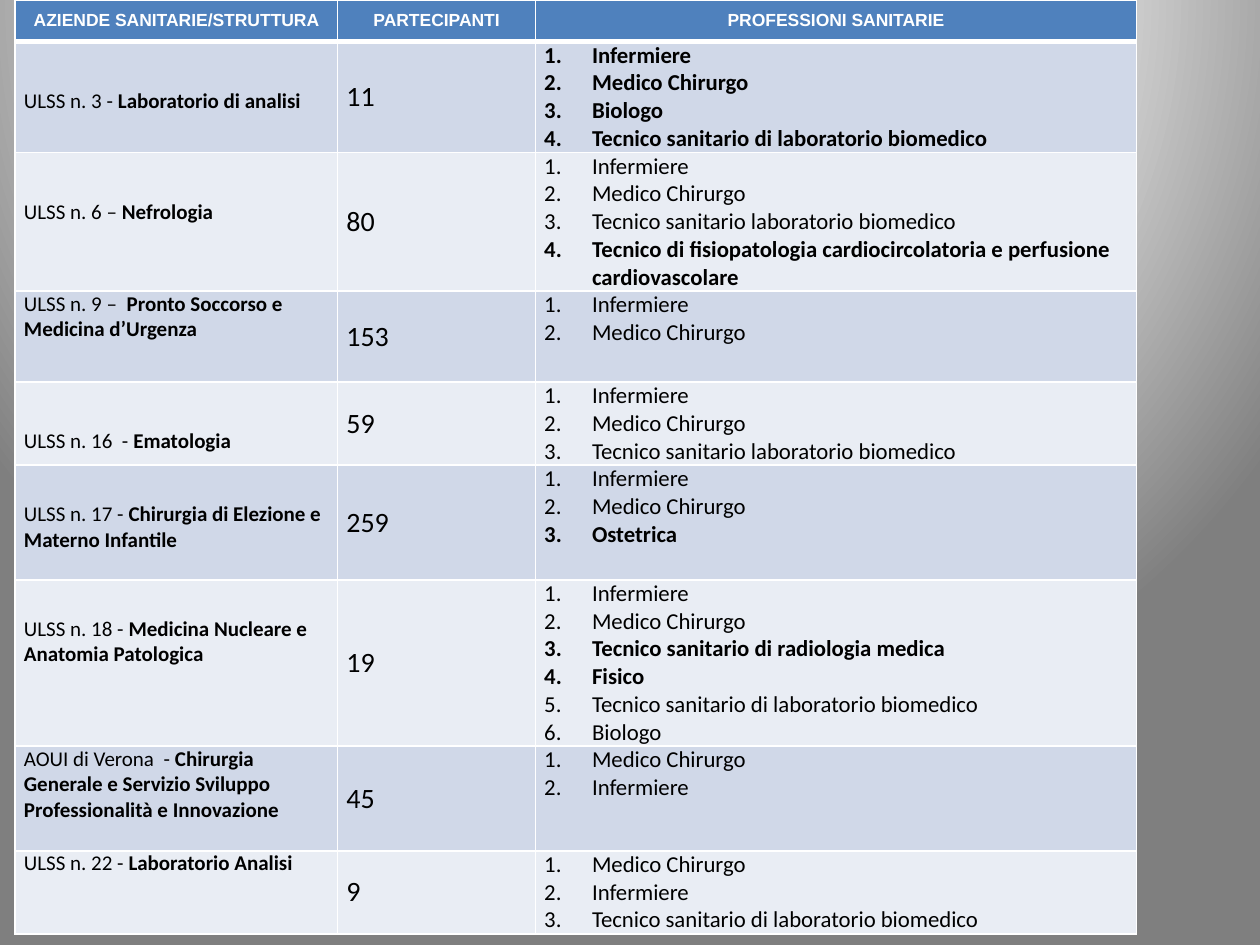
"""Build a slide with a table of health units, participants and professions."""
from collections import namedtuple

from pptx import Presentation
from pptx.dml.color import RGBColor
from pptx.enum.text import MSO_ANCHOR as Anchor, PP_ALIGN as Align
from pptx.oxml import parse_xml
from pptx.oxml.ns import nsdecls
from pptx.util import Inches, Pt

Unit = namedtuple("Unit", "name ward drop participants jobs bold_jobs")

COLUMNS = (2.56, 1.57, 4.77)
ROWS = (0.33, 0.88, 1.1, 0.72, 0.66, 0.91, 1.32, 0.83, 0.66)
HEADINGS = ("AZIENDE SANITARIE/STRUTTURA", "PARTECIPANTI", "PROFESSIONI SANITARIE")
WHITE, BLACK, HEADER = "FFFFFF", "000000", "4F81BD"
BANDS = ("D0D8E8", "E9EDF4")
INDENT = Inches(0.38)

NURSE, DOCTOR, BIOLOGIST = "Infermiere", "Medico Chirurgo", "Biologo"
LAB = "Tecnico sanitario laboratorio biomedico"
LAB_DI = "Tecnico sanitario di laboratorio biomedico"
PERFUSION = "Tecnico di fisiopatologia cardiocircolatoria e perfusione cardiovascolare"
RADIOLOGY, PHYSICIST, MIDWIFE = "Tecnico sanitario di radiologia medica", "Fisico", "Ostetrica"

UNITS = (
    Unit("ULSS n. 3 - ", "Laboratorio di analisi", 0.37, 11,
         (NURSE, DOCTOR, BIOLOGIST, LAB_DI), (NURSE, DOCTOR, BIOLOGIST, LAB_DI)),
    Unit("ULSS n. 6 – ", "Nefrologia", 0.37, 80,
         (NURSE, DOCTOR, LAB, PERFUSION), (PERFUSION,)),
    Unit("ULSS n. 9 –  ", "Pronto Soccorso e Medicina d’Urgenza", 0, 153,
         (NURSE, DOCTOR), ()),
    Unit("ULSS n. 16  - ", "Ematologia", 0.37, 59, (NURSE, DOCTOR, LAB), ()),
    Unit("ULSS n. 17 - ", "Chirurgia di Elezione e Materno Infantile", 0.29, 259,
         (NURSE, DOCTOR, MIDWIFE), (MIDWIFE,)),
    Unit("ULSS n. 18 - ", "Medicina Nucleare e Anatomia Patologica", 0.29, 19,
         (NURSE, DOCTOR, RADIOLOGY, PHYSICIST, LAB_DI, BIOLOGIST), (RADIOLOGY, PHYSICIST)),
    Unit("AOUI di Verona  - ",
         "Chirurgia Generale e Servizio Sviluppo Professionalità e Innovazione", 0, 45,
         (DOCTOR, NURSE), ()),
    Unit("ULSS n. 22 - ", "Laboratorio Analisi", 0, 9, (DOCTOR, NURSE, LAB_DI), ()),
)


def color(hex_code):
    """Turn a hex string into a colour."""
    return RGBColor.from_string(hex_code)


def set_background(slide):
    """Fill the background with a round gradient from white to grey."""
    stops = "".join(
        f'<a:gs pos="{share * 1000}"><a:srgbClr val="{tone}"/></a:gs>'
        for share, tone in ((0, WHITE), (40, "FEFEFE"), (100, "7F7F7F")))
    slide.element.cSld.insert(0, parse_xml(
        f'<p:bg {nsdecls("p", "a")}><p:bgPr><a:gradFill rotWithShape="1">'
        f'<a:gsLst>{stops}</a:gsLst><a:path path="circle">'
        '<a:fillToRect l="50000" t="-80000" r="50000" b="180000"/></a:path>'
        '</a:gradFill><a:effectLst/></p:bgPr></p:bg>'))


def style_cell(cell, fill, anchor, top=1, bottom=1, drop=0):
    """Set the fill, white borders, margins and anchor of a cell."""
    cell.fill.solid()
    cell.fill.fore_color.rgb = color(fill)
    cell.margin_left = cell.margin_right = Inches(0.07)
    cell.margin_top, cell.margin_bottom = Inches(drop), 0
    cell.vertical_anchor = anchor
    borders = (("L", 1), ("R", 1), ("T", top), ("B", bottom))
    for place, (side, width) in enumerate(borders):
        cell._tc.get_or_add_tcPr().insert(place, parse_xml(
            f'<a:ln{side} {nsdecls("a")} w="{Pt(width)}"><a:solidFill>'
            f'<a:srgbClr val="{WHITE}"/></a:solidFill></a:ln{side}>'))


def style_text(paragraph, size, bold=None, tone=BLACK, face="Calibri"):
    """Set the font of a paragraph."""
    font = paragraph.font
    font.name, font.size, font.bold = face, Pt(size), bold
    font.color.rgb = color(tone)


def write_heading(cell, text):
    """Write a centred column heading."""
    style_cell(cell, HEADER, Anchor.MIDDLE, bottom=3)
    heading = cell.text_frame.paragraphs[0]
    heading.text, heading.alignment = text, Align.CENTER
    style_text(heading, 10, True, WHITE, "Arial")


def write_unit_name(cell, unit):
    """Write the unit in regular type and its ward in bold."""
    label = cell.text_frame.paragraphs[0]
    for text, bold in ((unit.name, False), (unit.ward, True)):
        part = label.add_run()
        part.text, part.font.bold = text, bold
    style_text(label, 12)


def write_participants(cell, count):
    """Write the number of participants."""
    number = cell.text_frame.paragraphs[0]
    number.text = str(count)
    style_text(number, 16, False)


def write_jobs(cell, unit):
    """Write the professions as a numbered list."""
    frame = cell.text_frame
    frame.text = "\n".join(unit.jobs)
    for job, item in zip(unit.jobs, frame.paragraphs):
        properties = item._p.get_or_add_pPr()
        properties.set("marL", str(INDENT))
        properties.set("indent", str(-INDENT))
        properties.append(parse_xml(
            f'<a:buFont {nsdecls("a")} typeface="+mj-lt"/>'))
        properties.append(parse_xml(
            f'<a:buAutoNum {nsdecls("a")} type="arabicPeriod"/>'))
        style_text(item, 13, job in unit.bold_jobs)


def write_unit(cells, unit, index):
    """Fill one body row."""
    fill, top = BANDS[index % 2], 1 if index else 3
    name, participants, jobs = cells
    style_cell(name, fill, Anchor.TOP, top, drop=unit.drop)
    style_cell(participants, fill, Anchor.MIDDLE, top)
    style_cell(jobs, fill, Anchor.TOP, top)
    write_unit_name(name, unit)
    write_participants(participants, unit.participants)
    write_jobs(jobs, unit)


def add_units_table(slide):
    """Add the table with its headings and units."""
    table = slide.shapes.add_table(
        len(ROWS), len(COLUMNS), Inches(0.12), 0,
        Inches(sum(COLUMNS)), Inches(sum(ROWS))).table
    for column, width in zip(table.columns, COLUMNS):
        column.width = Inches(width)
    for row, height in zip(table.rows, ROWS):
        row.height = Inches(height)
    for cell, text in zip(table.rows[0].cells, HEADINGS):
        write_heading(cell, text)
    for index, unit in enumerate(UNITS):
        write_unit(table.rows[index + 1].cells, unit, index)


def main():
    """Build and save the slide."""
    deck = Presentation()
    deck.slide_width, deck.slide_height = Inches(10), Inches(7.5)
    slide = deck.slides.add_slide(deck.slide_layouts[6])
    set_background(slide)
    add_units_table(slide)
    deck.save("out.pptx")


if __name__ == "__main__":
    main()
